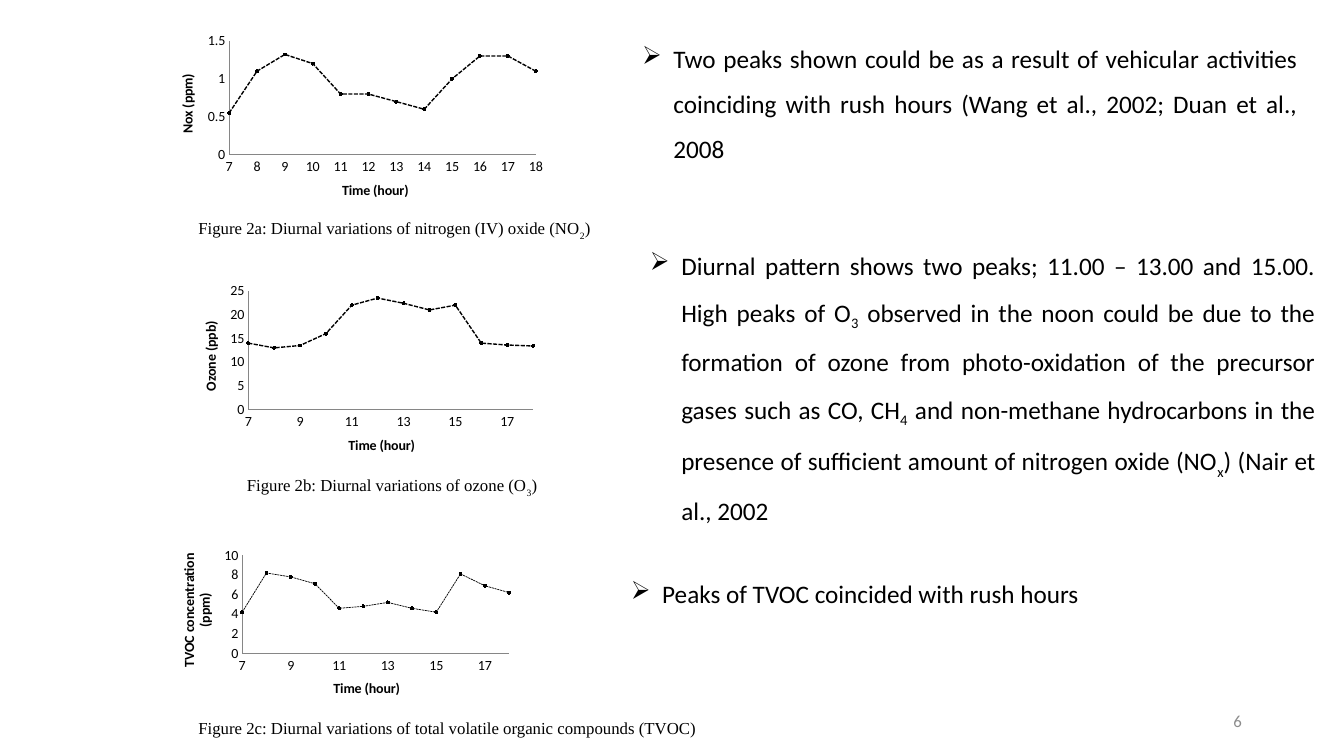
from dataclasses import dataclass

from lxml import etree
from pptx import Presentation
from pptx.chart.data import XyChartData
from pptx.dml.color import RGBColor
from pptx.enum.chart import XL_CHART_TYPE, XL_MARKER_STYLE, XL_TICK_MARK
from pptx.enum.dml import MSO_LINE
from pptx.enum.text import MSO_ANCHOR, MSO_AUTO_SIZE, PP_ALIGN
from pptx.oxml.ns import qn
from pptx.util import Cm, Pt

SMOOTH_SCATTER = XL_CHART_TYPE.XY_SCATTER_SMOOTH
CIRCLE = XL_MARKER_STYLE.CIRCLE
NO_TICKS = XL_TICK_MARK.NONE
SHORT_DASH = MSO_LINE.SQUARE_DOT
LEFT, RIGHT, JUSTIFY = PP_ALIGN.LEFT, PP_ALIGN.RIGHT, PP_ALIGN.JUSTIFY
TOP, MIDDLE = MSO_ANCHOR.TOP, MSO_ANCHOR.MIDDLE
FIT_SHAPE, FIXED = MSO_AUTO_SIZE.SHAPE_TO_FIT_TEXT, MSO_AUTO_SIZE.NONE

BLACK = RGBColor(0x00, 0x00, 0x00)
AXIS_GRAY = RGBColor(0x86, 0x86, 0x86)
NUMBER_GRAY = RGBColor(0x8C, 0x8C, 0x8C)
BODY_FONT = "Calibri"
CAPTION_FONT = "Times New Roman"
BULLET = "➢"
BULLET_INDENT = Cm(0.79)
HOURS = [0, *range(7, 19)]


@dataclass
class Area:
    left: float
    top: float
    width: float
    height: float

    def lengths(self) -> tuple:
        return Cm(self.left), Cm(self.top), Cm(self.width), Cm(self.height)


@dataclass
class DiurnalChart:
    area: Area
    plot: Area
    title: str
    values: list
    top_value: float
    value_step: float
    hour_step: int
    line_width: float = 1


@dataclass
class Passage:
    area: Area
    pieces: list
    align: PP_ALIGN = JUSTIFY
    spacing: float = 1


CHARTS = [
    DiurnalChart(Area(3.99, 0.74, 9.91, 4.8), Area(0.18, 0.06, 0.78, 0.6), "Nox (ppm)",
                 [0.55, 0.55, 1.1, 1.32, 1.2, 0.8, 0.8, 0.7, 0.6, 1, 1.3, 1.3, 1.1],
                 1.5, 0.5, 1),
    DiurnalChart(Area(4.62, 6.99, 9.09, 4.9), Area(0.18, 0.07, 0.79, 0.61), "Ozone (ppb)",
                 [11, 14, 13, 13.5, 16, 22, 23.5, 22.4, 21, 22, 14, 13.6, 13.4],
                 25, 5, 2),
    DiurnalChart(Area(4.04, 13.69, 8.97, 4.34), Area(0.23, 0.07, 0.75, 0.57),
                 "TVOC concentration (ppm)",
                 [4.2, 4.2, 8.2, 7.8, 7.1, 4.6, 4.8, 5.2, 4.6, 4.2, 8.1, 6.9, 6.2],
                 10, 2, 2, 0.5),
]

CAPTIONS = [
    Passage(Area(4.75, 5.41, 10.64, 0.76),
            ["Figure 2a: Diurnal variations of nitrogen (IV) oxide (NO", "2", ")"]),
    Passage(Area(5.97, 11.89, 7.92, 0.76),
            ["Figure 2b: Diurnal variations of ozone (O", "3", ")"]),
    Passage(Area(4.75, 17.96, 13.34, 0.76),
            ["Figure 2c: Diurnal variations of total volatile organic compounds (TVOC) "]),
]

FINDINGS = [
    Passage(Area(15.93, 0.58, 17.02, 3.71),
            ["Two peaks shown could be as a result of vehicular activities coinciding "
             "with rush hours (Wang et al., 2002; Duan et al., 2008"], spacing=1.5),
    Passage(Area(16.13, 5.79, 17.27, 7.19),
            ["Diurnal pattern shows two peaks; 11.00 – 13.00 and 15.00. High peaks of O", "3",
             " observed in the noon could be due to the formation of ozone from "
             "photo-oxidation of the precursor gases such as CO, CH", "4",
             " and non-methane hydrocarbons in the presence of sufficient amount of "
             "nitrogen oxide (NO", "x", ") (Nair et al., 2002"], spacing=1.5),
    Passage(Area(15.65, 14.45, 16.54, 1.02),
            ["Peaks of TVOC coincided with rush hours"], LEFT),
]

PAGE_NUMBER = Passage(Area(23.93, 17.65, 7.62, 1.02), ["6"], RIGHT)


def add_text(page, passage: Passage, *, size: float, font: str = BODY_FONT,
             color: RGBColor = BLACK, anchor=TOP, wrap: bool = True,
             auto_size=FIT_SHAPE, bullet: bool = False, subscript: int = -25) -> None:
    box = page.shapes.add_textbox(*passage.area.lengths())
    frame = box.text_frame
    frame.word_wrap = wrap
    frame.auto_size = auto_size
    frame.vertical_anchor = anchor
    para = frame.paragraphs[0]
    para.alignment = passage.align
    para.line_spacing = passage.spacing
    if bullet:
        properties = para._p.get_or_add_pPr()
        properties.set("marL", str(BULLET_INDENT))
        properties.set("indent", str(-BULLET_INDENT))
        etree.SubElement(properties, qn("a:buChar")).set("char", BULLET)
    for index, piece in enumerate(passage.pieces):
        span = para.add_run()
        span.text = piece
        span.font.name = font
        span.font.size = Pt(size)
        span.font.color.rgb = color
        if index % 2:
            span._r.get_or_add_rPr().set("baseline", str(subscript * 1000))


def place_plot(chart, plot: Area) -> None:
    plot_area = chart._chartSpace.find(".//" + qn("c:plotArea"))
    for old_layout in plot_area.findall(qn("c:layout")):
        plot_area.remove(old_layout)
    layout = etree.Element(qn("c:layout"))
    manual = etree.SubElement(layout, qn("c:manualLayout"))
    settings = [("layoutTarget", "inner"), ("xMode", "edge"), ("yMode", "edge"),
                ("x", plot.left), ("y", plot.top), ("w", plot.width), ("h", plot.height)]
    for name, value in settings:
        etree.SubElement(manual, qn("c:" + name)).set("val", str(value))
    plot_area.insert(0, layout)


def format_axis(axis, title: str, low: float, high: float, step: float) -> None:
    axis.minimum_scale = low
    axis.maximum_scale = high
    axis.major_unit = step
    axis.has_major_gridlines = False
    axis.major_tick_mark = NO_TICKS
    axis.minor_tick_mark = NO_TICKS
    axis.format.line.color.rgb = AXIS_GRAY
    axis.format.line.width = Pt(0.75)
    axis.tick_labels.number_format = "General"
    axis.tick_labels.number_format_is_linked = False
    axis.has_title = True
    span = axis.axis_title.text_frame.paragraphs[0].add_run()
    span.text = title
    span.font.name = BODY_FONT
    span.font.size = Pt(10)
    span.font.bold = True
    span.font.color.rgb = BLACK


def add_diurnal_chart(page, item: DiurnalChart) -> None:
    data = XyChartData()
    readings = data.add_series("Series 1")
    for hour, value in zip(HOURS, item.values):
        readings.add_data_point(hour, value)
    chart = page.shapes.add_chart(SMOOTH_SCATTER, *item.area.lengths(), data).chart
    chart.has_title = False
    chart.has_legend = False
    chart.font.name = BODY_FONT
    chart.font.size = Pt(10)
    chart.font.color.rgb = BLACK
    chart.plots[0].vary_by_categories = False
    place_plot(chart, item.plot)
    format_axis(chart.category_axis, "Time (hour)", 7, 18, item.hour_step)
    format_axis(chart.value_axis, item.title, 0, item.top_value, item.value_step)
    series = chart.plots[0].series[0]
    series.smooth = True
    series.format.line.color.rgb = BLACK
    series.format.line.width = Pt(item.line_width)
    series.format.line.dash_style = SHORT_DASH
    series.marker.style = CIRCLE
    series.marker.size = 2
    series.marker.format.fill.solid()
    series.marker.format.fill.fore_color.rgb = BLACK
    series.marker.format.line.color.rgb = BLACK


def main() -> None:
    deck = Presentation()
    deck.slide_width, deck.slide_height = Cm(33.87), Cm(19.05)
    page = deck.slides.add_slide(deck.slide_layouts[6])
    for item, caption in zip(CHARTS, CAPTIONS):
        add_diurnal_chart(page, item)
        add_text(page, caption, size=12, font=CAPTION_FONT, anchor=MIDDLE,
                 wrap=False, subscript=-30)
    for finding in FINDINGS:
        add_text(page, finding, size=18, bullet=True)
    add_text(page, PAGE_NUMBER, size=12, color=NUMBER_GRAY, anchor=MIDDLE, auto_size=FIXED)
    deck.save("out.pptx")


if __name__ == "__main__":
    main()
